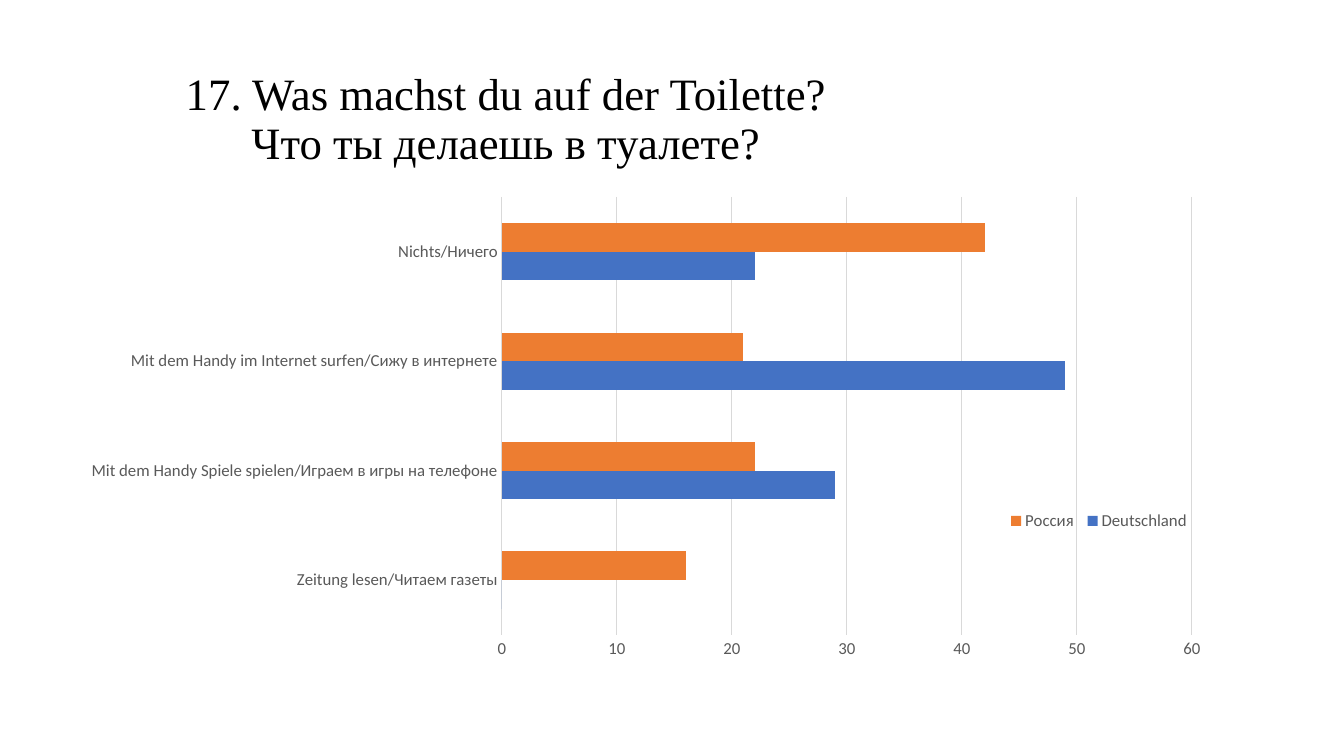
from dataclasses import dataclass

from lxml.etree import SubElement
from pptx import Presentation
from pptx.chart.data import CategoryChartData
from pptx.dml.color import RGBColor
from pptx.enum.chart import XL_CHART_TYPE, XL_LEGEND_POSITION, XL_TICK_MARK
from pptx.enum.text import MSO_ANCHOR, PP_ALIGN
from pptx.oxml.ns import qn
from pptx.util import Emu, Pt

BLACK = RGBColor(0x00, 0x00, 0x00)
GREY = RGBColor(0x59, 0x59, 0x59)
PALE = RGBColor(0xD9, 0xD9, 0xD9)
BLUE = RGBColor(0x44, 0x72, 0xC4)
ORANGE = RGBColor(0xED, 0x7D, 0x31)


@dataclass
class Box:
    """A rectangle in px."""
    left: int
    top: int
    width: int
    height: int


@dataclass
class Group:
    """One country's answers in percent."""
    name: str
    vals: tuple[int, ...]
    color: RGBColor


TITLE = Box(-121, 47, 1254, 147)
CHART = Box(69, 186, 1155, 518)
PLOT = Box(502, 197, 690, 438)
LEGEND = Box(1003, 506, 192, 30)

ANSWERS = (
    "Zeitung lesen/Читаем газеты",
    "Mit dem Handy Spiele spielen/Играем в игры на телефоне",
    "Mit dem Handy im Internet surfen/Сижу в интернете",
    "Nichts/Ничего",
)
GROUPS = (
    Group("Deutschland", (0, 29, 49, 22), BLUE),
    Group("Россия", (16, 22, 21, 42), ORANGE),
)


def px(n: int) -> Emu:
    """Turn px into EMU."""
    return Emu(round(n * 914400 / 100.8))


def place(box: Box) -> list[Emu]:
    """Give the sides of a box in EMU."""
    return [px(n) for n in (box.left, box.top, box.width, box.height)]


def style(font, size: int, color: RGBColor, face: str = "Calibri") -> None:
    """Set size, colour and face of a font."""
    font.size = Pt(size)
    font.name = face
    font.color.rgb = color


def add_text(slide, text: str, box: Box, *, size: int, face: str,
             color: RGBColor = BLACK, align=PP_ALIGN.CENTER,
             anchor=MSO_ANCHOR.MIDDLE, space: float = 0.9) -> None:
    """Add a text box with one paragraph."""
    frame = slide.shapes.add_textbox(*place(box)).text_frame
    frame.word_wrap = True
    frame.vertical_anchor = anchor
    para = frame.paragraphs[0]
    para.text = text
    para.alignment = align
    para.line_spacing = space
    for run in para.runs:
        style(run.font, size, color, face)


def set_layout(part, box: Box, index: int, inner: bool = False) -> None:
    """Fix a chart part at a box on the slide."""
    for old in part.findall(qn("c:layout")):
        part.remove(old)
    layout = SubElement(part, qn("c:layout"))
    part.insert(index, layout)
    manual = SubElement(layout, qn("c:manualLayout"))
    pairs = [("layoutTarget", "inner")] if inner else []
    pairs += [("xMode", "edge"), ("yMode", "edge"),
              ("x", (box.left - CHART.left) / CHART.width),
              ("y", (box.top - CHART.top) / CHART.height),
              ("w", box.width / CHART.width),
              ("h", box.height / CHART.height)]
    for tag, val in pairs:
        SubElement(manual, qn(f"c:{tag}")).set("val", str(val))


def add_bars(slide) -> None:
    """Add the bar chart of both countries."""
    data = CategoryChartData()
    data.categories = ANSWERS
    for group in GROUPS:
        data.add_series(group.name, group.vals)
    chart = slide.shapes.add_chart(
        XL_CHART_TYPE.BAR_CLUSTERED, *place(CHART), data).chart
    chart.has_title = False
    style(chart.font, 10, BLACK)

    plot = chart.plots[0]
    plot.gap_width = 182
    plot.overlap = 0
    plot.vary_by_categories = False
    for series, group in zip(plot.series, GROUPS):
        series.format.fill.solid()
        series.format.fill.fore_color.rgb = group.color

    cats, vals = chart.category_axis, chart.value_axis
    for axis in (cats, vals):
        axis.major_tick_mark = axis.minor_tick_mark = XL_TICK_MARK.NONE
        style(axis.tick_labels.font, 12, GREY)
    vals.minimum_scale, vals.maximum_scale, vals.major_unit = 0, 60, 10
    vals.format.line.fill.background()
    cats.has_major_gridlines = False
    vals.has_major_gridlines = True
    for line in (cats.format.line, vals.major_gridlines.format.line):
        line.color.rgb = PALE
        line.width = Pt(0.75)

    chart.has_legend = True
    legend = chart.legend
    legend.position = XL_LEGEND_POSITION.BOTTOM
    legend.include_in_layout = False
    style(legend.font, 12, GREY)
    set_layout(legend._element, LEGEND, 1)
    set_layout(plot._element.getparent(), PLOT, 0, inner=True)


def main() -> None:
    """Build and save the slide."""
    deck = Presentation()
    deck.slide_width, deck.slide_height = px(1344), px(756)
    slide = deck.slides.add_slide(deck.slide_layouts[6])
    add_text(slide, "17. Was machst du auf der Toilette?\vЧто ты делаешь в туалете?",
             TITLE, size=32, face="Times New Roman")
    add_bars(slide)
    deck.save("out.pptx")


if __name__ == "__main__":
    main()
